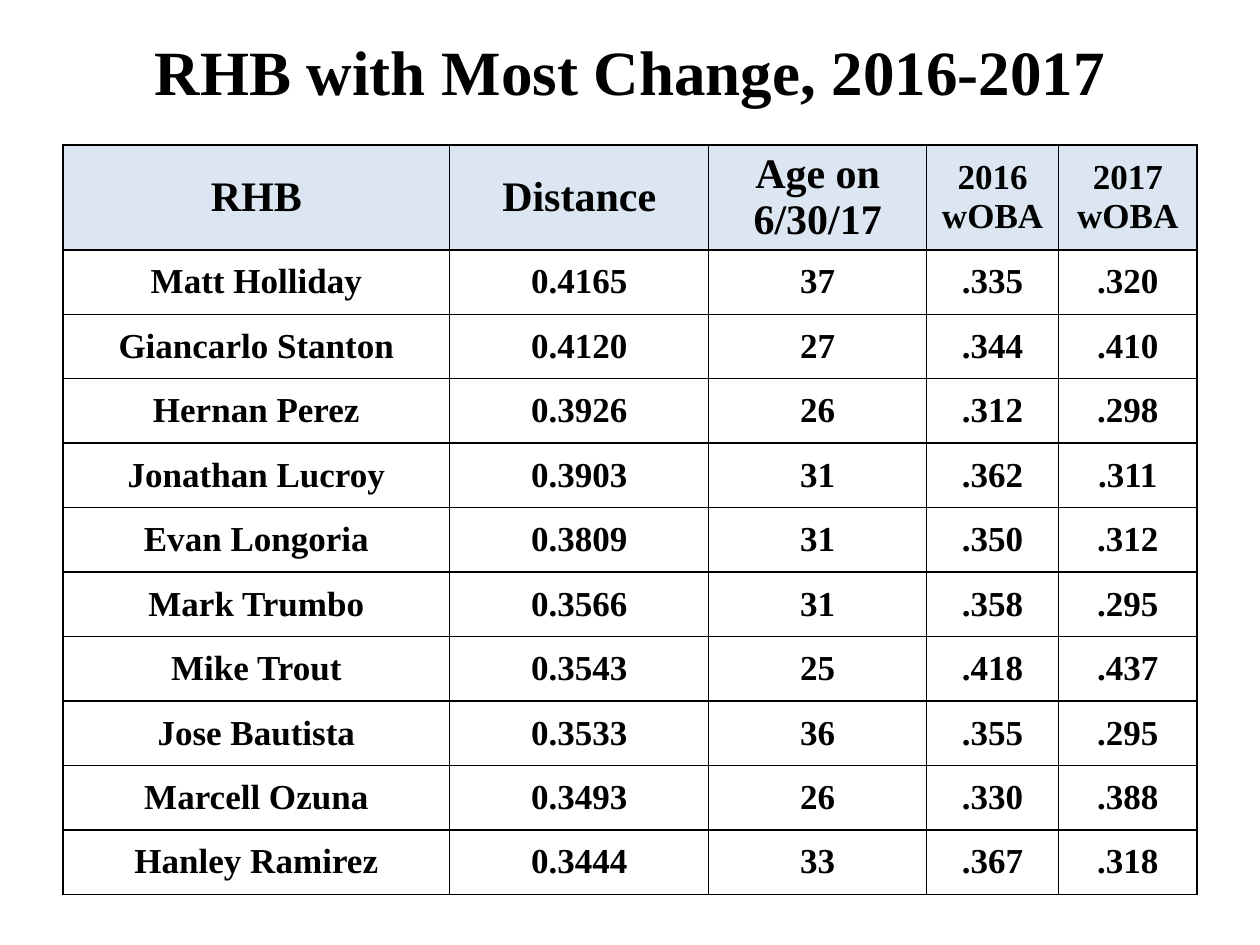
import pptx
import pptx.dml.color
import pptx.enum.text
import pptx.oxml
import pptx.oxml.ns
import pptx.util

Pt = pptx.util.Pt

TITLE = "RHB with Most Change, 2016-2017"
HEADERS = ["RHB", "Distance", "Age on 6/30/17", "2016 wOBA", "2017 wOBA"]
HEADER_SIZES = [24, 24, 24, 20, 20]
BATTERS = [
    ("Matt Holliday", "0.4165", "37", ".335", ".320"),
    ("Giancarlo Stanton", "0.4120", "27", ".344", ".410"),
    ("Hernan Perez", "0.3926", "26", ".312", ".298"),
    ("Jonathan Lucroy", "0.3903", "31", ".362", ".311"),
    ("Evan Longoria", "0.3809", "31", ".350", ".312"),
    ("Mark Trumbo", "0.3566", "31", ".358", ".295"),
    ("Mike Trout", "0.3543", "25", ".418", ".437"),
    ("Jose Bautista", "0.3533", "36", ".355", ".295"),
    ("Marcell Ozuna", "0.3493", "26", ".330", ".388"),
    ("Hanley Ramirez", "0.3444", "33", ".367", ".318"),
]
COLUMN_WIDTHS = [221, 148, 124.5, 75.5, 79]
HEADER_HEIGHT, ROW_HEIGHT = 60, 36.85
BODY_SIZE = 20
FONT = "Times New Roman"
COLORS = {"text": "000000", "border": "000000", "header": "DCE6F2"}


def style_text(tf, size):
    tf.vertical_anchor = pptx.enum.text.MSO_ANCHOR.MIDDLE
    for p in tf.paragraphs:
        p.alignment = pptx.enum.text.PP_ALIGN.CENTER
        for r in p.runs:
            r.font.name = FONT
            r.font.size = Pt(size)
            r.font.bold = True
            r.font.color.rgb = pptx.dml.color.RGBColor.from_string(COLORS["text"])


def add_borders(cell):
    """Put a 1 pt line on all four sides; lines must precede the cell's fill."""
    tc_pr = cell._tc.get_or_add_tcPr()
    for i, side in enumerate(("lnL", "lnR", "lnT", "lnB")):
        tc_pr.insert(i, pptx.oxml.parse_xml(
            f'<a:{side} {pptx.oxml.ns.nsdecls("a")} w="{Pt(1)}"><a:solidFill>'
            f'<a:srgbClr val="{COLORS["border"]}"/></a:solidFill></a:{side}>'))


def add_title(slide):
    title = slide.shapes.title
    title.left, title.top, title.width, title.height = Pt(78.5), Pt(14.5), Pt(563), Pt(51)
    tf = title.text_frame
    tf.text = TITLE
    tf.word_wrap = False
    tf.auto_size = pptx.enum.text.MSO_AUTO_SIZE.NONE
    style_text(tf, 36)


def add_batter_table(slide):
    rows = [HEADERS] + BATTERS
    heights = [HEADER_HEIGHT] + [ROW_HEIGHT] * len(BATTERS)
    table = slide.shapes.add_table(
        len(rows), len(HEADERS), Pt(36), Pt(82.8),
        Pt(sum(COLUMN_WIDTHS)), Pt(sum(heights))).table
    table.horz_banding = False
    for column, width in zip(table.columns, COLUMN_WIDTHS):
        column.width = Pt(width)
    for i, (values, height) in enumerate(zip(rows, heights)):
        table.rows[i].height = Pt(height)
        for j, value in enumerate(values):
            cell = table.cell(i, j)
            cell.text = value
            cell.margin_top = cell.margin_bottom = Pt(2)
            cell.vertical_anchor = pptx.enum.text.MSO_ANCHOR.MIDDLE
            style_text(cell.text_frame, BODY_SIZE if i else HEADER_SIZES[j])
            if i:
                cell.fill.background()
            else:
                cell.fill.solid()
                cell.fill.fore_color.rgb = pptx.dml.color.RGBColor.from_string(COLORS["header"])
            add_borders(cell)


def main():
    prs = pptx.Presentation()
    prs.slide_width, prs.slide_height = Pt(720), Pt(540)
    slide = prs.slides.add_slide(prs.slide_layouts.get_by_name("Title Only"))
    add_batter_table(slide)
    add_title(slide)
    prs.save("out.pptx")


if __name__ == "__main__":
    main()
